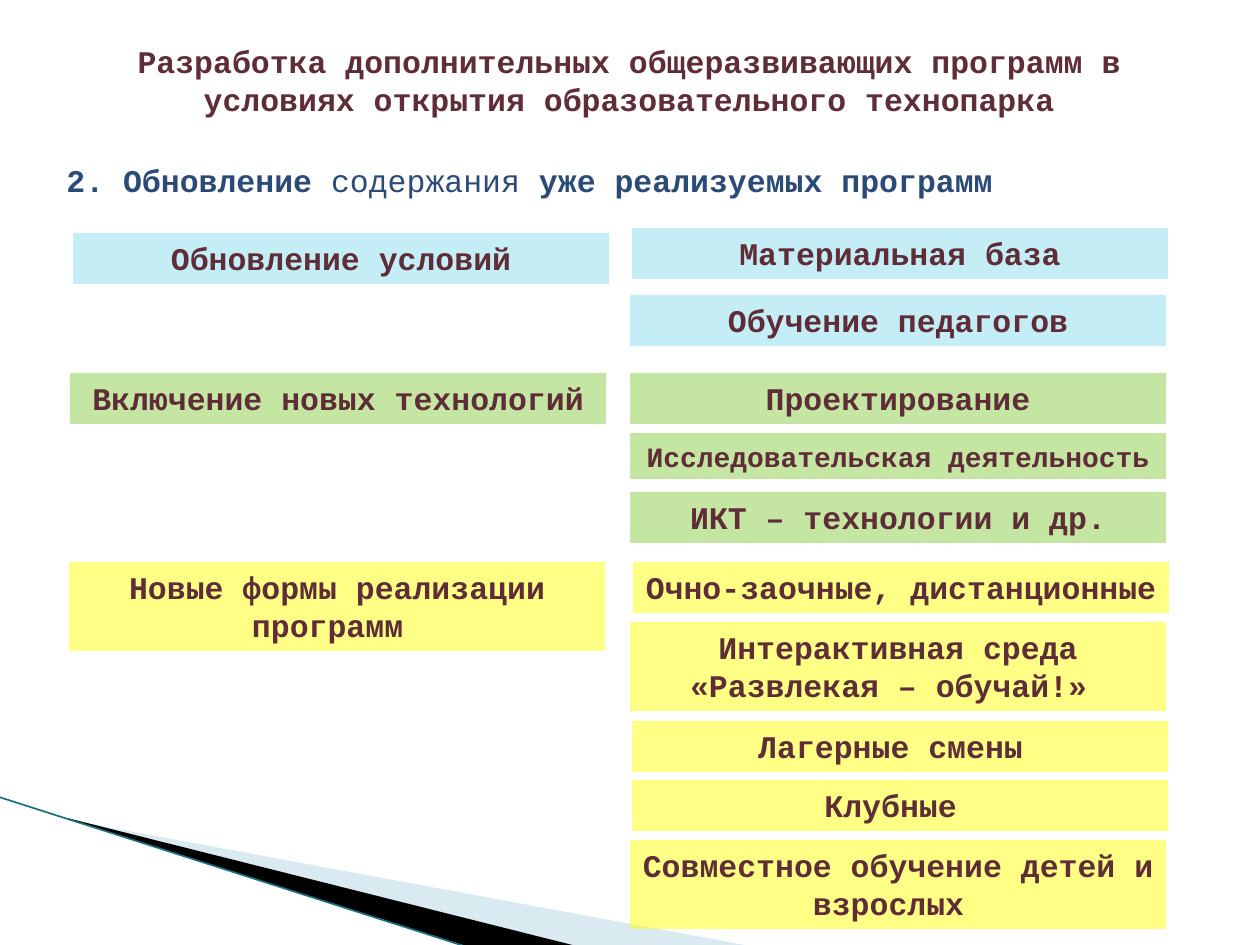
from pptx import Presentation, util as u
from pptx.dml.color import RGBColor
from pptx.enum import shapes as sh, text as tx
from pptx.oxml.ns import qn
from lxml import etree

PX = 914400 // 126
WINE, NAVY = "5E2D37", "2B4A76"
BLUE, GREEN, YELLOW = ("B5E9F4", 78), ("92D050", 53), ("FFFF00", 48)
WIDE = 536
HIGH = {1: 51, 2: 89}
SMALL = 46

TITLE = ("Разработка дополнительных общеразвивающих программ в "
         "условиях открытия образовательного технопарка")
HEAD = [("2. Обновление ", True), ("содержания ", False),
        ("уже реализуемых программ", True)]

# left, top, lines, text, fill
BOXES = [
    (73, 233, 1, "Обновление условий", BLUE),
    (632, 228, 1, "Материальная база", BLUE),
    (630, 295, 1, "Обучение педагогов", BLUE),
    (70, 373, 1, "Включение новых технологий", GREEN),
    (630, 373, 1, "Проектирование", GREEN),
    (630, 492, 1, "ИКТ – технологии и др.", GREEN),
    (69, 562, 2, "Новые формы реализации программ ", YELLOW),
    (633, 562, 1, "Очно-заочные, дистанционные", YELLOW),
    (630, 622, 2, "Интерактивная среда «Развлекая – обучай!» ", YELLOW),
    (632, 721, 1, "Лагерные смены ", YELLOW),
    (632, 780, 1, "Клубные ", YELLOW),
    (630, 840, 2, "Совместное обучение детей и взрослых ", YELLOW),
]
SMALL_BOX = (630, 433, "Исследовательская деятельность", GREEN)

# points, fill
WEDGES = [
    ([(69, 820), (750, 946), (575, 946), (69, 819)], ("A0CBDC", 40)),
    ([(67, 818), (576, 946), (469, 947), (68, 819)], ("000000", 100)),
]
EDGE = ((-1, 797), (467, 947), "1A6F82")


def rgb(code):
    return RGBColor.from_string(code)


def paint(shape, fill):
    """Fill with a (colour, opacity in percent) pair; no line or shadow."""
    code, alpha = fill
    shape.shadow.inherit = False
    shape.line.fill.background()
    shape.fill.solid()
    shape.fill.fore_color.rgb = rgb(code)
    if alpha < 100:
        color = shape.fill._xPr.find(".//" + qn("a:srgbClr"))
        etree.SubElement(color, qn("a:alpha"), val=str(alpha * 1000))


def write(shape, runs, size=18, color=WINE, align=tx.PP_ALIGN.CENTER,
          anchor=tx.MSO_ANCHOR.TOP):
    frame = shape.text_frame
    frame.word_wrap = True
    frame.auto_size = tx.MSO_AUTO_SIZE.SHAPE_TO_FIT_TEXT
    frame.vertical_anchor = anchor
    para = frame.paragraphs[0]
    para.alignment = align
    for words, bold in runs:
        run = para.add_run()
        run.text = words
        font = run.font
        font.name, font.size, font.bold = "Courier New", u.Pt(size), bold
        font.color.rgb = rgb(color)


def place(*nums):
    return [n * PX for n in nums]


def add_box(slide, left, top, high, words, fill, size=18):
    box = slide.shapes.add_shape(sh.MSO_SHAPE.RECTANGLE,
                                 *place(left, top, WIDE, high))
    paint(box, fill)
    write(box, [(words, True)], size=size)


def add_wedges(slide):
    for points, fill in WEDGES:
        path = slide.shapes.build_freeform(*points[0], scale=PX)
        path.add_line_segments(points[1:], close=True)
        paint(path.convert_to_shape(), fill)
    start, end, color = EDGE
    line = slide.shapes.add_connector(sh.MSO_CONNECTOR.STRAIGHT,
                                      *place(*start, *end))
    line.line.color.rgb = rgb(color)
    line.line.width = u.Pt(0.95)
    etree.SubElement(line._element.spPr, qn("a:effectLst"))


def main():
    deck = Presentation()
    deck.slide_width, deck.slide_height = u.Inches(10), u.Inches(7.5)
    slide = deck.slides.add_slide(deck.slide_layouts[6])
    add_wedges(slide)
    head = slide.shapes.add_textbox(*place(54, 155, 1150, HIGH[1]))
    write(head, HEAD, color=NAVY, align=tx.PP_ALIGN.JUSTIFY)
    title = slide.shapes.add_textbox(*place(54, 36, 1150, HIGH[2]))
    write(title, [(TITLE, True)])
    for left, top, lines, words, fill in BOXES:
        add_box(slide, left, top, HIGH[lines], words, fill)
    left, top, words, fill = SMALL_BOX
    add_box(slide, left, top, SMALL, words, fill, size=16)
    deck.save("out.pptx")


if __name__ == "__main__":
    main()
